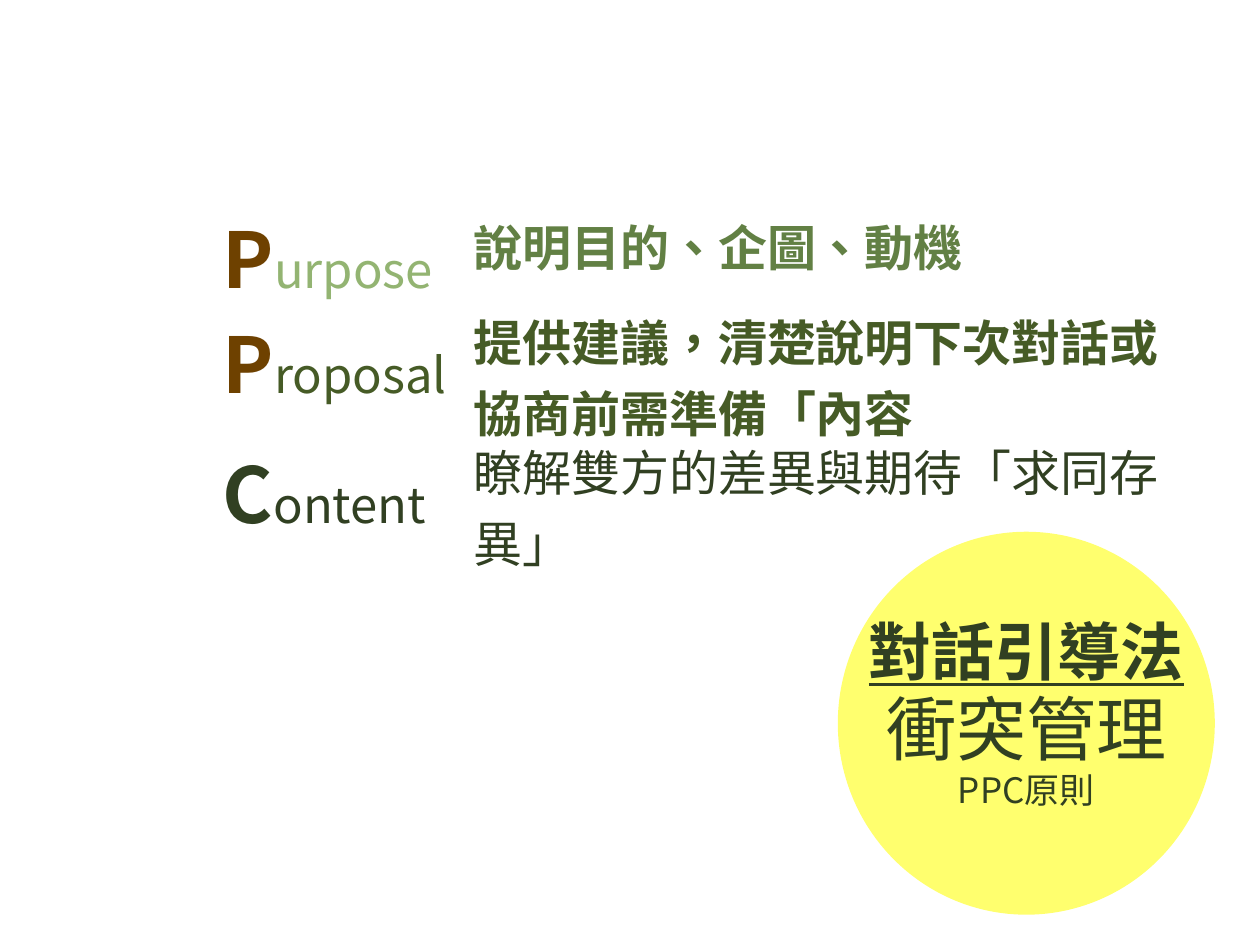
from lxml.etree import SubElement
from pptx import Presentation
from pptx.dml.color import RGBColor
from pptx.enum.lang import MSO_LANGUAGE_ID
from pptx.enum.shapes import MSO_SHAPE
from pptx.enum.text import MSO_ANCHOR, PP_ALIGN
from pptx.oxml.ns import qn
from pptx.util import Cm, Pt

FONT = "Noto Sans CJK SC"
NO_GRID_STYLE = "{2D5ABB26-0587-4C30-8999-92F81FD0307C}"
BROWN = RGBColor(0x6E, 0x41, 0x00)
PALE_GREEN = RGBColor(0x93, 0xB4, 0x72)
MID_GREEN = RGBColor(0x62, 0x80, 0x44)
OLIVE = RGBColor(0x46, 0x5B, 0x26)
DARK_GREEN = RGBColor(0x31, 0x40, 0x22)
YELLOW = RGBColor(0xFF, 0xFF, 0x00)


class SlideBuilder:
    def __init__(self, slide):
        self.slide = slide

    def run(self, paragraph, text, size, color, bold=False, underline=False):
        run = paragraph.add_run()
        run.text = text
        font = run.font
        font.size, font.bold, font.underline = Pt(size), bold, underline
        font.language_id = MSO_LANGUAGE_ID.TRADITIONAL_CHINESE
        font.color.rgb = color
        font.name = FONT
        SubElement(run._r.get_or_add_rPr(), qn("a:ea"), typeface=FONT)

    def circle(self, group, box, color, opacity):
        circle = group.shapes.add_shape(MSO_SHAPE.OVAL, *box)
        circle.shadow.inherit = False
        circle.fill.solid()
        circle.fill.fore_color.rgb = color
        circle.line.fill.background()
        rgb = circle.fill._xPr.find(".//" + qn("a:srgbClr"))
        SubElement(rgb, qn("a:alpha"), val=str(opacity * 1000))

    def centred_text(self, group, box, top_inset, lines):
        frame = group.shapes.add_textbox(*box).text_frame
        frame.word_wrap = True
        frame.margin_top = top_inset
        for index, line in enumerate(lines):
            paragraph = frame.add_paragraph() if index else frame.paragraphs[0]
            paragraph.alignment = PP_ALIGN.CENTER
            paragraph.line_spacing = 0.97
            self.run(paragraph, *line)

    def table(self, box, widths, heights, rows):
        table = self.slide.shapes.add_table(len(rows), len(widths), *box).table
        table.first_row = table.horz_banding = False
        table._tbl.find(".//" + qn("a:tableStyleId")).text = NO_GRID_STYLE
        for column, width in zip(table.columns, widths):
            column.width = width
        for row, height, contents in zip(table.rows, heights, rows):
            row.height = height
            for cell, (runs, bottom) in zip(row.cells, contents):
                cell.fill.background()
                cell.margin_bottom = bottom
                for run in runs:
                    self.run(cell.text_frame.paragraphs[0], *run)
            row.cells[1].vertical_anchor = MSO_ANCHOR.MIDDLE


def main():
    deck = Presentation()
    deck.slide_width, deck.slide_height = Cm(25.4), Cm(19.05)
    builder = SlideBuilder(deck.slides.add_slide(deck.slide_layouts[6]))

    # Topic circle with its caption
    topic = builder.slide.shapes.add_group_shape()
    builder.circle(topic, (Cm(16.89), Cm(10.72), Cm(7.6), Cm(7.72)), YELLOW, 57)
    builder.centred_text(
        topic, (Cm(16.89), Cm(11.58), Cm(7.6), Cm(5.13)), Cm(0.85),
        [("對話引導法", 36, DARK_GREEN, True, True),
         ("衝突管理", 40, DARK_GREEN),
         ("PPC原則", 20, DARK_GREEN)])

    # PPC principles: initial, rest of the word, explanation
    # Negative bottom margins let tall lines run past compact rows
    normal, tight_initial, tight_detail = Cm(0.13), Cm(-0.27), Cm(-0.38)
    principles = [
        ("P", BROWN, "urpose", PALE_GREEN, tight_initial,
         "說明目的、企圖、動機", MID_GREEN, True, normal),
        ("P", BROWN, "roposal", OLIVE, normal,
         "提供建議，清楚說明下次對話或協商前需準備「內容", OLIVE, True, tight_detail),
        ("C", DARK_GREEN, "ontent", DARK_GREEN, normal,
         "瞭解雙方的差異與期待「求同存異」", DARK_GREEN, False, tight_detail),
    ]
    rows = [
        (([(initial, 44, initial_color, True), (rest, 28, rest_color)], word_bottom),
         ([(detail, 28, detail_color, bold)], detail_bottom))
        for (initial, initial_color, rest, rest_color, word_bottom,
             detail, detail_color, bold, detail_bottom) in principles
    ]
    builder.table((Cm(4.24), Cm(3.89), Cm(19.66), Cm(7.37)),
                  (Cm(5.05), Cm(14.61)), (Cm(2.12), Cm(2.62), Cm(2.62)), rows)

    deck.save("out.pptx")


if __name__ == "__main__":
    main()
